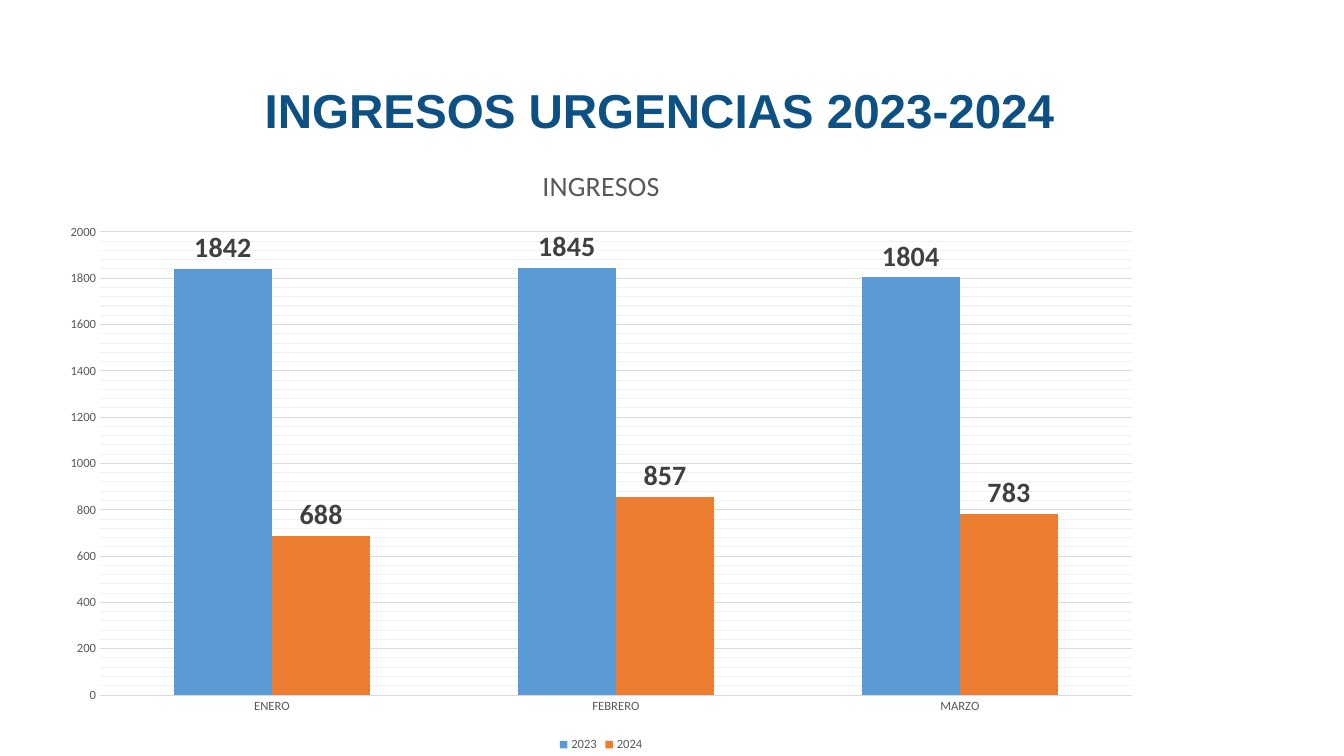
from copy import deepcopy
from dataclasses import dataclass

from pptx import Presentation
from pptx import util as u
from pptx.chart.data import CategoryChartData
from pptx.dml.color import RGBColor
from pptx.enum import chart as ch
from pptx.enum import text
from pptx.oxml.ns import qn


@dataclass(frozen=True)
class Theme:
    heading_font: str = "Arial"
    chart_font: str = "Calibri"
    heading: str = "0D5084"
    muted: str = "595959"
    label: str = "404040"
    grid: str = "D9D9D9"
    minor_grid: str = "F2F2F2"
    series: tuple = ("5B9BD5", "ED7D31")
    heading_size: int = 34
    chart_size: int = 20
    axis_size: int = 9


def set_all(obj, values):
    for name, value in values.items():
        setattr(obj, name, value)


def set_font(font, name, size, color, bold=False):
    set_all(font, {"name": name, "size": u.Pt(size), "bold": bold})
    font.color.rgb = RGBColor.from_string(color)


def set_line(line, color, width=0.75):
    line.color.rgb = RGBColor.from_string(color)
    line.width = u.Pt(width)


def style_minor_gridlines(axis, color):
    """Give the minor gridlines the major ones' line in another colour."""
    element = axis._element
    line = deepcopy(element.find(qn("c:majorGridlines")).find(qn("c:spPr")))
    next(line.iter(qn("a:srgbClr"))).set("val", color)
    element.find(qn("c:minorGridlines")).append(line)


class SlideBuilder:
    def __init__(self, prs, theme):
        self.theme = theme
        self.s = prs.slides.add_slide(prs.slide_layouts[5])

    def title(self, words, left, top, width, height):
        t, sp = self.theme, self.s.shapes.title
        set_all(sp, {"left": u.Cm(left), "top": u.Cm(top),
                     "width": u.Cm(width), "height": u.Cm(height)})
        tf = sp.text_frame
        set_all(tf, {"word_wrap": True, "auto_size": text.MSO_AUTO_SIZE.NONE,
                     "vertical_anchor": text.MSO_ANCHOR.MIDDLE})
        p = tf.paragraphs[0]
        set_all(p, {"alignment": text.PP_ALIGN.CENTER, "line_spacing": 0.9})
        r = p.add_run()
        r.text = words
        set_font(r.font, t.heading_font, t.heading_size, t.heading, True)

    def column_chart(self, heading, categories, series, left, top, width, height):
        t = self.theme
        data = CategoryChartData()
        data.categories = categories
        for name, values in series.items():
            data.add_series(name, values)
        chart = self.s.shapes.add_chart(
            ch.XL_CHART_TYPE.COLUMN_CLUSTERED,
            u.Cm(left), u.Cm(top), u.Cm(width), u.Cm(height), data).chart
        set_font(chart.font, t.chart_font, t.axis_size, t.muted)

        chart.has_title = True
        r = chart.chart_title.text_frame.paragraphs[0].add_run()
        r.text = heading
        set_font(r.font, t.chart_font, t.chart_size, t.muted)

        chart.has_legend = True
        set_all(chart.legend, {"position": ch.XL_LEGEND_POSITION.BOTTOM,
                               "include_in_layout": False})
        set_font(chart.legend.font, t.chart_font, t.axis_size, t.muted)
        self.axes(chart)
        self.columns(chart.plots[0])

    def axes(self, chart):
        t, value_axis = self.theme, chart.value_axis
        for axis in (chart.category_axis, value_axis):
            set_all(axis, {"major_tick_mark": ch.XL_TICK_MARK.NONE,
                           "minor_tick_mark": ch.XL_TICK_MARK.NONE})
            set_font(axis.tick_labels.font, t.chart_font, t.axis_size, t.muted)
        set_line(chart.category_axis.format.line, t.grid)
        value_axis.format.line.fill.background()
        set_all(value_axis, {"minimum_scale": 0, "maximum_scale": 2000,
                             "major_unit": 200, "minor_unit": 40,
                             "has_major_gridlines": True,
                             "has_minor_gridlines": True})
        set_line(value_axis.major_gridlines.format.line, t.grid)
        style_minor_gridlines(value_axis, t.minor_grid)

    def columns(self, plot):
        t = self.theme
        set_all(plot, {"gap_width": 150, "overlap": 0, "vary_by_categories": False})
        for series, color in zip(plot.series, t.series):
            fill = series.format.fill
            fill.solid()
            fill.fore_color.rgb = RGBColor.from_string(color)
            labels = series.data_labels
            set_all(labels, {"show_value": True,
                             "position": ch.XL_LABEL_POSITION.OUTSIDE_END})
            set_font(labels.font, t.chart_font, t.chart_size, t.label, True)


def main():
    prs = Presentation()
    set_all(prs, {"slide_width": u.Cm(33.87), "slide_height": u.Cm(19.05)})
    slide = SlideBuilder(prs, Theme())
    slide.title("INGRESOS URGENCIAS 2023-2024 ", 1.83, 1.02, 29.92, 3.68)
    slide.column_chart(
        "INGRESOS", ["ENERO", "FEBRERO", "MARZO"],
        {"2023": (1842, 1845, 1804), "2024": (688, 857, 783)},
        1.22, 3.61, 27.86, 15.44)
    prs.save("out.pptx")


if __name__ == "__main__":
    main()
